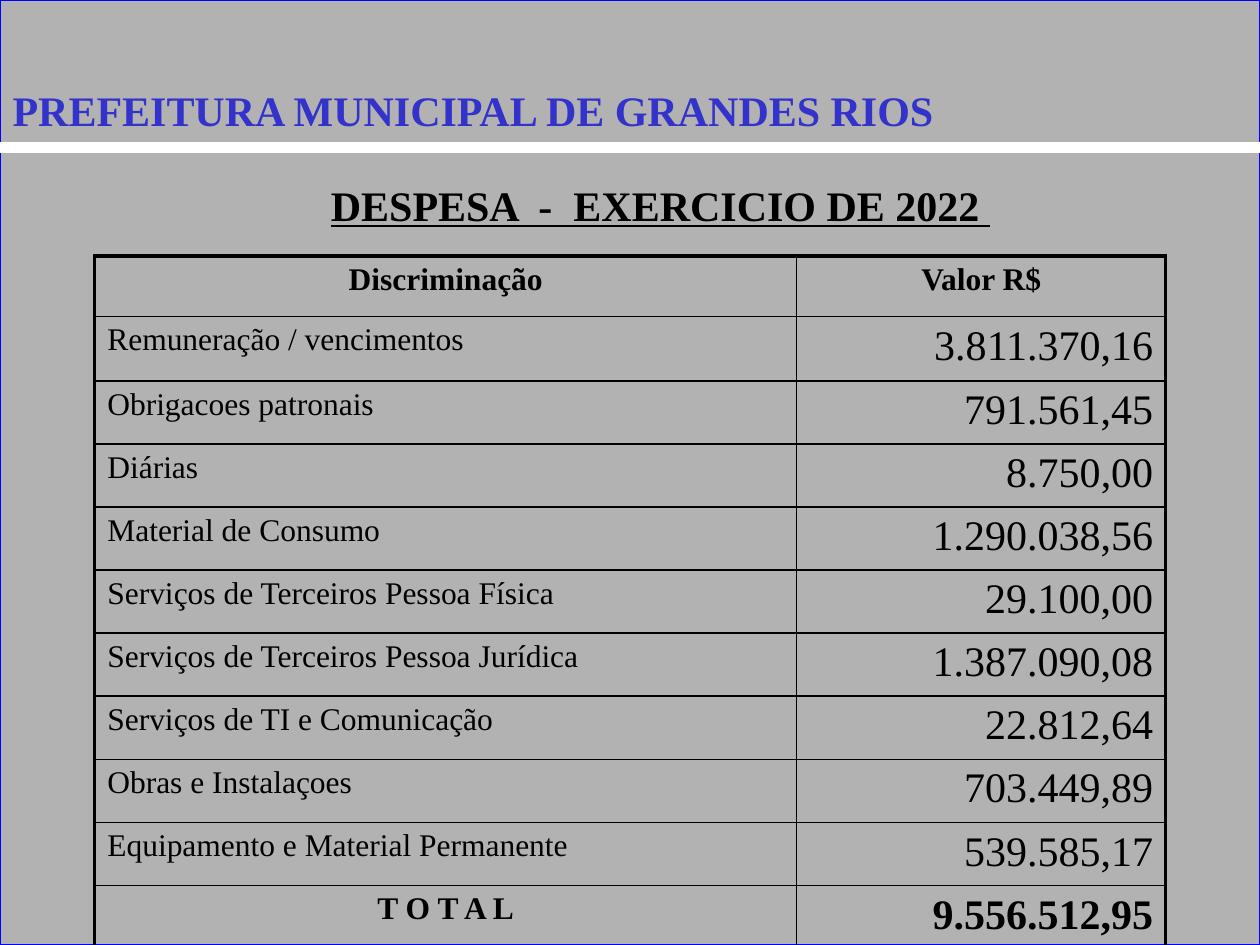
from pptx import Presentation
from pptx.dml.color import RGBColor
from pptx.enum.shapes import MSO_CONNECTOR, MSO_SHAPE
from pptx.enum.text import MSO_ANCHOR, PP_ALIGN
from pptx.oxml import parse_xml
from pptx.oxml.ns import nsdecls
from pptx.oxml.xmlchemy import OxmlElement
from pptx.util import Cm, Pt

COLORS = {
    "backdrop": "B2B2B2",
    "frame": "0000FF",
    "rule": "FFFFFF",
    "heading": "3333CC",
    "text": "000000",
    "shadow": "808080",
}
EXPENSES = [
    ("Discriminação", "Valor R$"),
    ("Remuneração / vencimentos", "3.811.370,16"),
    ("Obrigacoes patronais", "791.561,45"),
    ("Diárias", "8.750,00"),
    ("Material de Consumo", "1.290.038,56"),
    ("Serviços de Terceiros Pessoa Física", "29.100,00"),
    ("Serviços de Terceiros Pessoa Jurídica", "1.387.090,08"),
    ("Serviços de TI e Comunicação", "22.812,64"),
    ("Obras e Instalaçoes", "703.449,89"),
    ("Equipamento e Material Permanente", "539.585,17"),
    ("T O T A L", "9.556.512,95"),
]


def write(frame, text, size=24, color="text", bold=False, underline=False,
          align=PP_ALIGN.LEFT):
    frame.word_wrap = True
    paragraph = frame.paragraphs[0]
    paragraph.alignment = align
    run = paragraph.add_run()
    run.text = text
    run.font.name = "Times New Roman"
    run.font.size = Pt(size)
    run.font.bold = bold
    run.font.underline = underline
    run.font.color.rgb = RGBColor.from_string(COLORS[color])
    return run


def set_borders(cell, **widths):
    """Draw cell borders; keys are L, R, T and B, values are points."""
    properties = cell._tc.get_or_add_tcPr()
    for position, (side, width) in enumerate(widths.items()):
        properties.insert(position, parse_xml(
            f'<a:ln{side} {nsdecls("a")} w="{Pt(width)}"><a:solidFill>'
            f'<a:srgbClr val="{COLORS["text"]}"/></a:solidFill></a:ln{side}>'))


presentation = Presentation()
presentation.slide_width = Cm(25.4)
presentation.slide_height = Cm(19.05)
slide = presentation.slides.add_slide(presentation.slide_layouts[5])
shapes = slide.shapes

# Backdrop, placed behind the title placeholder
backdrop = shapes.add_shape(MSO_SHAPE.RECTANGLE, 0, 0, Cm(25.4), Cm(19.05))
backdrop.shadow.inherit = False
backdrop.fill.solid()
backdrop.fill.fore_color.rgb = RGBColor.from_string(COLORS["backdrop"])
backdrop.line.color.rgb = RGBColor.from_string(COLORS["frame"])
backdrop.line.width = Pt(0.75)
backdrop._element.getparent().insert(2, backdrop._element)

rule = shapes.add_connector(MSO_CONNECTOR.STRAIGHT, 0, Cm(2.97), Cm(25.4), Cm(2.97))
rule.line.color.rgb = RGBColor.from_string(COLORS["rule"])
rule.line.width = Pt(6)
rule._element.spPr.append(OxmlElement("a:effectLst"))

# Headings
municipality = shapes.title
municipality.left, municipality.top = Cm(0), Cm(1.47)
municipality.width, municipality.height = Cm(20.9), Cm(1.27)
heading = write(municipality.text_frame, "PREFEITURA MUNICIPAL DE GRANDES RIOS",
                color="heading", bold=True)
heading.font.fill._xPr.find(
    "{http://schemas.openxmlformats.org/drawingml/2006/main}solidFill"
).addnext(parse_xml(
    f'<a:effectLst {nsdecls("a")}><a:outerShdw dist="38100" dir="2700000">'
    f'<a:srgbClr val="{COLORS["shadow"]}"/></a:outerShdw></a:effectLst>'))

subtitle = shapes.add_textbox(Cm(3.51), Cm(3.38), Cm(19.61), Cm(2.82))
write(subtitle.text_frame, "DESPESA  -  EXERCICIO DE 2022 ", bold=True,
      underline=True, align=PP_ALIGN.CENTER)

for box in (municipality, subtitle):
    box.text_frame.vertical_anchor = MSO_ANCHOR.TOP
    box.text_frame.margin_top = Cm(0.23)

# Expense table
last = len(EXPENSES) - 1
table = shapes.add_table(len(EXPENSES), 2, Cm(1.91), Cm(5.16), Cm(21.59), Cm(13.95)).table
table.first_row = table.horz_banding = False
table.columns[0].width, table.columns[1].width = Cm(14.15), Cm(7.44)
for index, texts in enumerate(EXPENSES):
    table.rows[index].height = {0: Cm(1.22), 1: Cm(1.3)}.get(index, Cm(1.27))
    for column, text in enumerate(texts):
        cell = table.cell(index, column)
        cell.fill.background()
        is_amount = column == 1 and index > 0
        if is_amount:
            align = PP_ALIGN.RIGHT
        else:
            align = PP_ALIGN.CENTER if index in (0, last) else PP_ALIGN.LEFT
        write(cell.text_frame, text, size=24 if is_amount else 18,
              bold=index in (0, last), align=align)
        set_borders(cell,
                    L=2.25 if column == 0 else 1,
                    R=2.25 if column == 1 else 1,
                    T=2.25 if index == 0 else 1,
                    B=2.25 if index == last else 1)

presentation.save("out.pptx")
